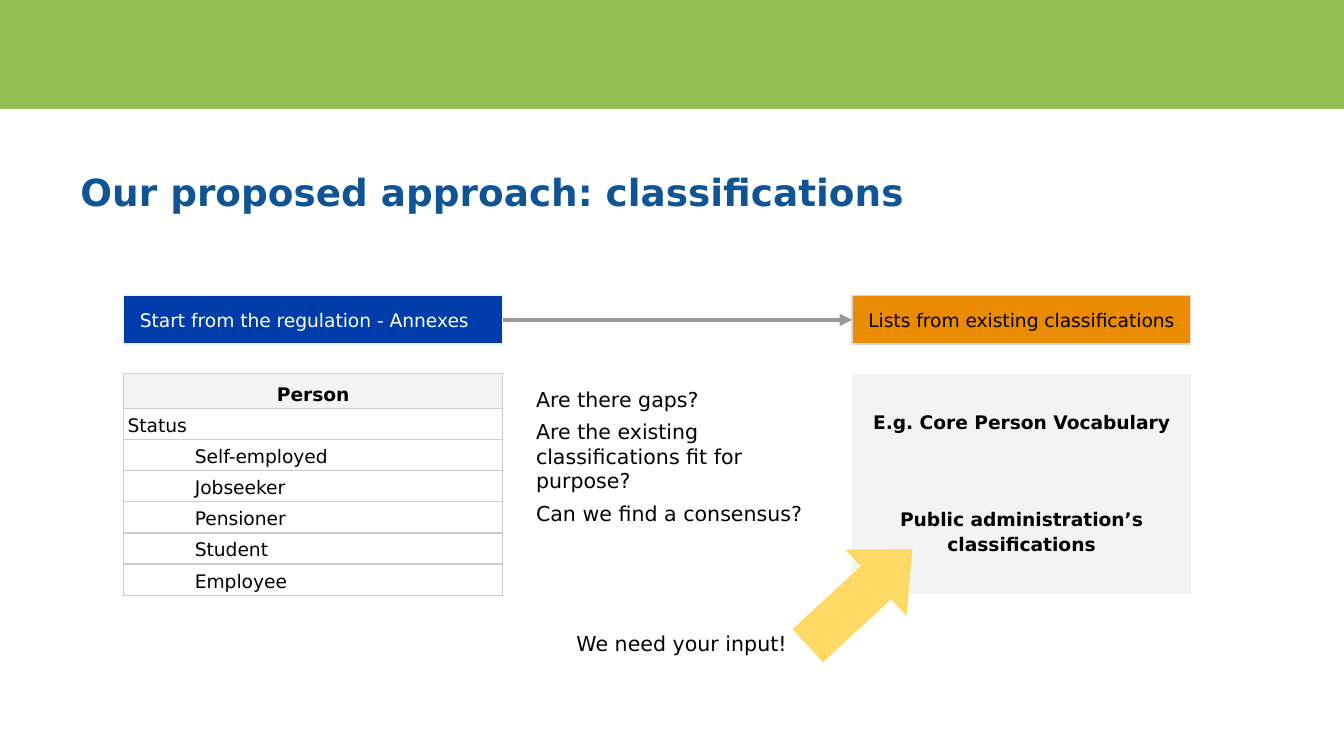
from lxml import etree
from pptx import Presentation
from pptx.dml.color import RGBColor
from pptx.enum.shapes import MSO_CONNECTOR, MSO_SHAPE
from pptx.enum.text import MSO_ANCHOR, PP_ALIGN
from pptx.oxml.ns import qn
from pptx.util import Inches, Pt

RECTANGLE, RIGHT_ARROW = MSO_SHAPE.RECTANGLE, MSO_SHAPE.RIGHT_ARROW
STRAIGHT = MSO_CONNECTOR.STRAIGHT
TOP, MIDDLE, BOTTOM = MSO_ANCHOR.TOP, MSO_ANCHOR.MIDDLE, MSO_ANCHOR.BOTTOM
LEFT, CENTER = PP_ALIGN.LEFT, PP_ALIGN.CENTER
FONT = "DejaVu Sans"
BLACK, LIGHT_GREY = "000000", "F3F3F3"
PAGE_WIDTH = 10
PAGE_HEIGHT = PAGE_WIDTH * 9 / 16


def color(value):
    return RGBColor.from_string(value)


def write(para, text, size, tint=BLACK, bold=False, align=LEFT, indent=0):
    if indent:
        properties = para._p.get_or_add_pPr()
        properties.set("marL", str(Inches(indent)))
        properties.set("indent", "0")
    para.alignment = align
    span = para.add_run()
    span.text = text
    span.font.name = FONT
    span.font.size = Pt(size)
    span.font.bold = bold
    span.font.color.rgb = color(tint)


def set_margins(target, side, end):
    target.margin_left = target.margin_right = Inches(side)
    target.margin_top = target.margin_bottom = Inches(end)


def add_block(page, kind, box, fill, line=None):
    shape = page.shapes.add_shape(kind, *map(Inches, box))
    shape.shadow.inherit = False
    shape.fill.solid()
    shape.fill.fore_color.rgb = color(fill)
    if line:
        shape.line.color.rgb = color(line)
        shape.line.width = Pt(0.75)
    else:
        shape.line.fill.background()
    return shape


def add_text(page, box, lines, size, tint=BLACK, bold=False, anchor=TOP, end=0.1):
    frame = page.shapes.add_textbox(*map(Inches, box)).text_frame
    frame.word_wrap = True
    frame.vertical_anchor = anchor
    set_margins(frame, 0.1, end)
    for index, text in enumerate(lines):
        para = frame.add_paragraph() if index else frame.paragraphs[0]
        if index:
            para.space_before = Pt(4)
        write(para, text, size, tint, bold)


def add_label(page, box, text, fill, line, tint):
    label = add_block(page, RECTANGLE, box, fill, line)
    frame = label.text_frame
    frame.word_wrap = True
    frame.vertical_anchor = MIDDLE
    set_margins(frame, 0, 0)
    write(frame.paragraphs[0], text, 10, tint, indent=0.12)
    return label


def set_borders(cell, line):
    properties = cell._tc.get_or_add_tcPr()
    for side in ("a:lnL", "a:lnR", "a:lnT", "a:lnB"):
        border = etree.SubElement(properties, qn(side), w=str(Pt(0.75)))
        if line:
            solid = etree.SubElement(border, qn("a:solidFill"))
            etree.SubElement(solid, qn("a:srgbClr"), val=line)
        else:
            etree.SubElement(border, qn("a:noFill"))


def add_list(page, box, rows, anchor, line=None):
    """Each row is (text, height, is_heading, indent)."""
    table = page.shapes.add_table(len(rows), 1, *map(Inches, box)).table
    table.first_row = table.horz_banding = False
    for index, (text, height, heading, indent) in enumerate(rows):
        table.rows[index].height = Inches(height)
        cell = table.cell(index, 0)
        set_margins(cell, 0.03, 0.02)
        cell.vertical_anchor = anchor
        set_borders(cell, line)
        if heading:
            cell.fill.solid()
            cell.fill.fore_color.rgb = color(LIGHT_GREY)
        else:
            cell.fill.background()
        para = cell.text_frame.paragraphs[0]
        write(para, text, 10, bold=heading, align=CENTER if heading else LEFT,
              indent=indent)
        para.line_spacing = 1.15


def add_link(page, start, end):
    link = page.shapes.add_connector(STRAIGHT, 0, 0, 0, 0)
    link.begin_connect(start, 3)
    link.end_connect(end, 1)
    link.line.color.rgb = color("999999")
    link.line.width = Pt(2.25)
    etree.SubElement(link.line._get_or_add_ln(), qn("a:tailEnd"), type="triangle")
    etree.SubElement(link._element.spPr, qn("a:effectLst"))


def add_header(page, width):
    add_block(page, RECTANGLE, (0, 0, width, 0.81), "95C154")
    add_text(page, (0.5, 1.04, 7.99, 0.77),
             ["Our proposed approach: classifications"], 20, "0F5494", True,
             MIDDLE, 0.05)


def add_comparison(page, left, top, width):
    right_width = 2.52
    right = left + width - right_width
    left_width, label_height = 2.82, 0.36
    body = top + 0.58

    # Labels joined by an arrow
    regulation = add_label(page, (left, top, left_width, label_height),
                           "Start from the regulation - Annexes",
                           "003DAB", "EFEFEF", "FFFFFF")
    existing = add_label(page, (right, top, right_width, label_height),
                         "Lists from existing classifications",
                         "EB8C00", "D9D9D9", BLACK)

    # Regulation list and existing classifications
    statuses = ["Self-employed", "Jobseeker", "Pensioner", "Student", "Employee"]
    rows = [("Person", 0.26, True, 0), ("Status", 0.22, False, 0)]
    rows += [(status, 0.22, False, 0.5) for status in statuses]
    add_list(page, (left, body, left_width, 1.58), rows, BOTTOM, "CCCCCC")
    add_list(page, (right, body, right_width, 1.64),
             [("E.g. Core Person Vocabulary", 0.71, True, 0),
              ("Public administration’s classifications", 0.93, True, 0)], MIDDLE)
    add_link(page, regulation, existing)

    # Questions between the lists
    add_text(page, (left + left_width + 0.15, body, 2.23, 1.64),
             ["Are there gaps?",
              "Are the existing classifications fit for purpose?",
              "Can we find a consensus?"], 11)


def add_call(page, left, top):
    arrow = add_block(page, RIGHT_ARROW, (left + 1.68, top, 1.06, 0.67), "FFD966")
    arrow.adjustments[0] = 0.5
    arrow.adjustments[1] = 0.55
    arrow.rotation = 317.3
    add_text(page, (left, top + 0.49, 1.98, 0.41), ["We need your input!"], 11)


def main():
    deck = Presentation()
    deck.slide_width, deck.slide_height = Inches(PAGE_WIDTH), Inches(PAGE_HEIGHT)
    page = deck.slides.add_slide(deck.slide_layouts[6])
    add_header(page, PAGE_WIDTH)
    add_comparison(page, 0.92, 2.2, 7.94)
    add_call(page, 4.19, 4.11)
    deck.save("out.pptx")


if __name__ == "__main__":
    main()
